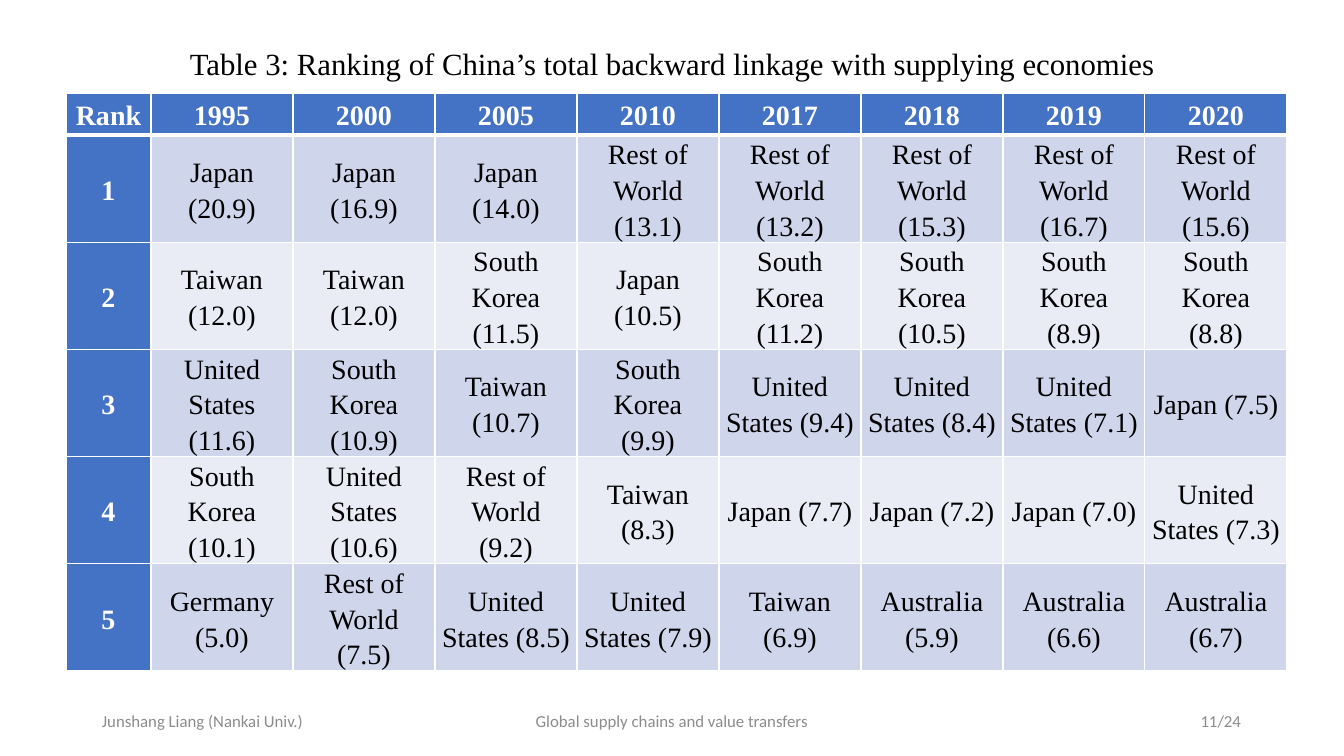
from dataclasses import dataclass

from lxml.etree import SubElement
from pptx import Presentation
from pptx.dml.color import RGBColor
from pptx.enum.text import MSO_ANCHOR as Anchor, MSO_AUTO_SIZE as AutoSize, PP_ALIGN as Align
from pptx.oxml.ns import qn
from pptx.util import Emu, Pt

EMU_PER_PX = 12192000 / 1344
TITLE_ONLY = 5


@dataclass(frozen=True)
class Theme:
    serif: str = "Times New Roman"
    sans: str = "Calibri"
    black: str = "000000"
    white: str = "FFFFFF"
    grey: str = "8C8C8C"
    header: str = "4472C4"
    bands: tuple = ("CFD5EA", "E9EBF5")
    caption_size: int = 22
    cell_size: int = 20
    footer_size: int = 12
    thin: int = 1
    thick: int = 3


def px(length):
    return Emu(round(length * EMU_PER_PX))


class SlideBuilder:
    def __init__(self, deck, theme):
        self.theme = theme
        self.slide = deck.slides.add_slide(deck.slide_layouts[TITLE_ONLY])

    def set_text(self, frame, text, font, size, color, align, bold=False, spacing=None):
        frame.text = text
        paragraph = frame.paragraphs[0]
        paragraph.alignment = align
        paragraph.line_spacing = spacing
        style = paragraph.runs[0].font
        style.name, style.size, style.bold = font, Pt(size), bold
        style.color.rgb = RGBColor.from_string(color)

    def caption(self, text, left, top, width, height):
        title = self.slide.shapes.title
        title.left, title.top, title.width, title.height = map(px, (left, top, width, height))
        frame = title.text_frame
        frame.word_wrap = True
        frame.auto_size = AutoSize.NONE
        frame.vertical_anchor = Anchor.TOP
        self.set_text(frame, text, self.theme.serif, self.theme.caption_size,
                      self.theme.black, Align.CENTER, spacing=0.9)

    def footer(self, text, left, top, width, height, align):
        box = self.slide.shapes.add_textbox(*map(px, (left, top, width, height)))
        frame = box.text_frame
        frame.word_wrap = True
        frame.vertical_anchor = Anchor.MIDDLE
        self.set_text(frame, text, self.theme.sans, self.theme.footer_size,
                      self.theme.grey, align)

    def borders(self, cell, widths):
        """Draw white cell edges; widths gives points for L, R, T and B."""
        properties = cell._tc.get_or_add_tcPr()
        for side, width in widths.items():
            line = SubElement(properties, qn(f"a:ln{side}"), w=str(Pt(width)))
            fill = SubElement(line, qn("a:solidFill"))
            SubElement(fill, qn("a:srgbClr"), val=self.theme.white)

    def cell(self, cell, text, row, column):
        theme = self.theme
        heading = row == 0 or column == 0
        cell.vertical_anchor = Anchor.MIDDLE
        cell.margin_left = cell.margin_right = px(6 if heading else 7)
        cell.margin_top = cell.margin_bottom = 0
        self.set_text(cell.text_frame, text, theme.serif, theme.cell_size,
                      theme.white if heading else theme.black,
                      Align.CENTER, bold=heading, spacing=1.15)
        self.borders(cell, {"L": theme.thin, "R": theme.thin,
                            "T": theme.thick if row == 1 else theme.thin,
                            "B": theme.thick if row == 0 else theme.thin})
        cell.fill.solid()
        color = theme.header if heading else theme.bands[(row - 1) % 2]
        cell.fill.fore_color.rgb = RGBColor.from_string(color)

    def table(self, rows, left, top, widths, heights):
        size = map(px, (left, top, sum(widths), sum(heights)))
        grid = self.slide.shapes.add_table(len(rows), len(widths), *size).table
        for column, width in zip(grid.columns, widths):
            column.width = px(width)
        for line, height in zip(grid.rows, heights):
            line.height = px(height)
        for r, texts in enumerate(rows):
            for c, text in enumerate(texts):
                self.cell(grid.cell(r, c), text, r, c)


YEARS = ["1995", "2000", "2005", "2010", "2017", "2018", "2019", "2020"]
SUPPLIERS = [
    ["Japan (20.9)", "Japan (16.9)", "Japan (14.0)", "Rest of World (13.1)",
     "Rest of World (13.2)", "Rest of World (15.3)", "Rest of World (16.7)",
     "Rest of World (15.6)"],
    ["Taiwan (12.0)", "Taiwan (12.0)", "South Korea (11.5)", "Japan (10.5)",
     "South Korea (11.2)", "South Korea (10.5)", "South Korea (8.9)", "South Korea (8.8)"],
    ["United States (11.6)", "South Korea (10.9)", "Taiwan (10.7)", "South Korea (9.9)",
     "United States (9.4)", "United States (8.4)", "United States (7.1)", "Japan (7.5)"],
    ["South Korea (10.1)", "United States (10.6)", "Rest of World (9.2)", "Taiwan (8.3)",
     "Japan (7.7)", "Japan (7.2)", "Japan (7.0)", "United States (7.3)"],
    ["Germany (5.0)", "Rest of World (7.5)", "United States (8.5)", "United States (7.9)",
     "Taiwan (6.9)", "Australia (5.9)", "Australia (6.6)", "Australia (6.7)"],
]


def main():
    deck = Presentation()
    deck.slide_width, deck.slide_height = px(1344), px(756)
    page = SlideBuilder(deck, Theme())

    page.caption("Table 3: Ranking of China’s total backward linkage with supplying economies",
                 131, 44, 1082, 47)
    ranking = [["Rank"] + YEARS]
    ranking += [[str(rank)] + names for rank, names in enumerate(SUPPLIERS, 1)]
    page.table(ranking, 66, 93, [85] + [142] * len(YEARS), [42] + [107] * len(SUPPLIERS))

    for text, left, width, align in (
        ("Junshang Liang (Nankai Univ.)", 92, 302, Align.LEFT),
        ("Global supply chains and value transfers", 445, 454, Align.CENTER),
        ("11/24", 949, 302, Align.RIGHT),
    ):
        page.footer(text, left, 701, width, 40, align)

    deck.save("out.pptx")


if __name__ == "__main__":
    main()
